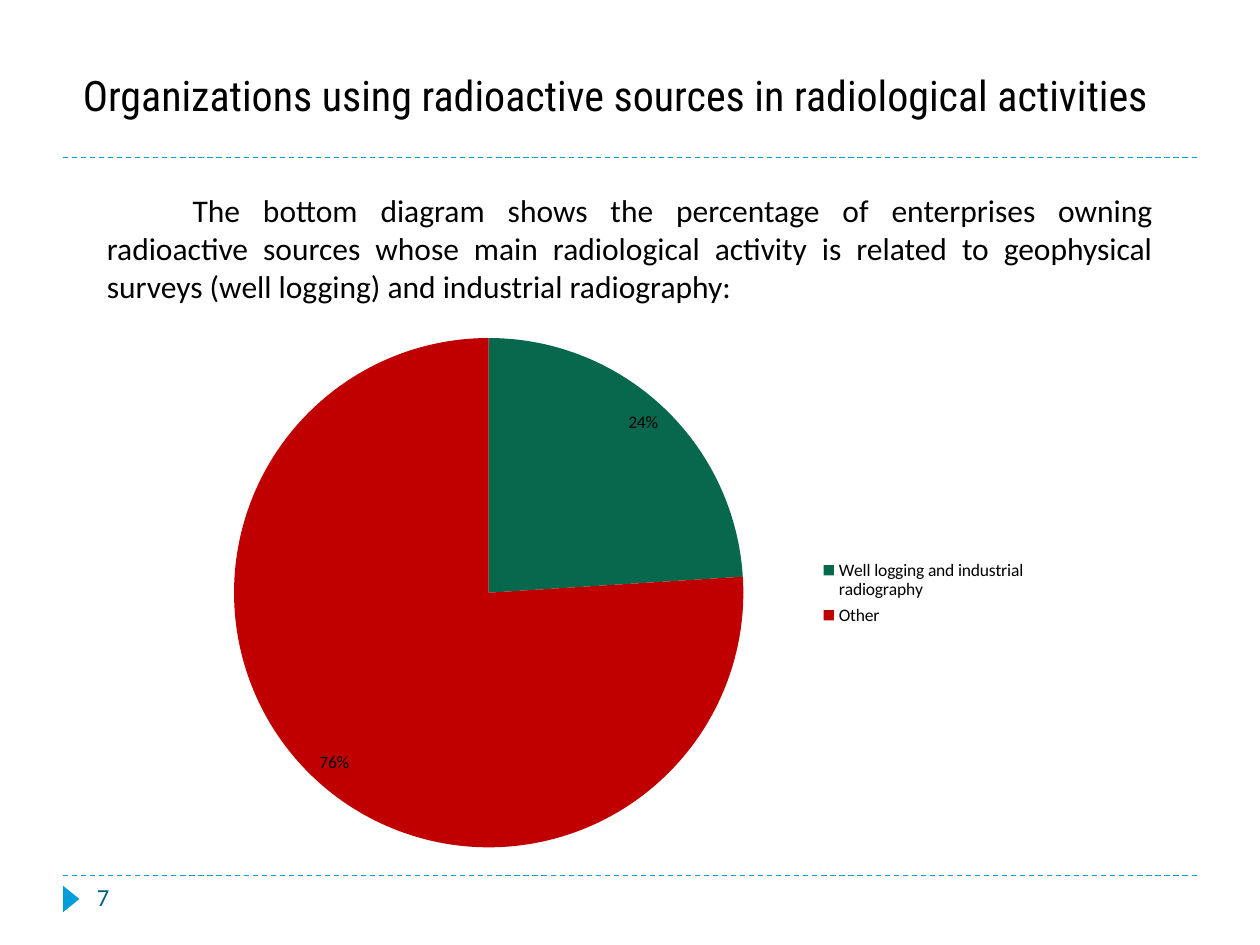
from lxml.etree import SubElement
from pptx import Presentation
from pptx.chart.data import CategoryChartData
from pptx.dml.color import RGBColor
from pptx.enum.chart import XL_CHART_TYPE, XL_LABEL_POSITION, XL_LEGEND_POSITION
from pptx.enum.dml import MSO_LINE
from pptx.enum.shapes import MSO_CONNECTOR, MSO_SHAPE
from pptx.enum.text import MSO_ANCHOR, MSO_AUTO_SIZE, PP_ALIGN
from pptx.oxml import parse_xml
from pptx.oxml.ns import nsdecls, qn
from pptx.util import Inches, Pt

BLACK = RGBColor(0x00, 0x00, 0x00)
ACCENT = RGBColor(0x00, 0x9D, 0xD9)
NUMBER_BLUE = RGBColor(0x04, 0x61, 0x7B)
GREEN = RGBColor(0x08, 0x68, 0x4E)
RED = RGBColor(0xC0, 0x00, 0x00)

deck = Presentation()
deck.slide_width, deck.slide_height = Inches(10), Inches(7.5)
slide = deck.slides.add_slide(deck.slide_layouts[5])
margin = deck.slide_width * 0.05
top_rule, bottom_rule = Inches(1.25), Inches(6.95)


def write(paragraph, text, font, size, color):
    run = paragraph.add_run()
    run.text = text
    run.font.name, run.font.size = font, Pt(size)
    run.font.color.rgb = color


def layout_xml(x, y, w, h, target=""):
    return parse_xml(
        f'<c:layout {nsdecls("c")}><c:manualLayout>{target}'
        '<c:xMode val="edge"/><c:yMode val="edge"/>'
        f'<c:x val="{x}"/><c:y val="{y}"/><c:w val="{w}"/><c:h val="{h}"/>'
        '</c:manualLayout></c:layout>')


# Dashed rules above and below the content
for y in (bottom_rule, top_rule):
    rule = slide.shapes.add_connector(
        MSO_CONNECTOR.STRAIGHT, int(margin), y, int(deck.slide_width - margin), y)
    rule.line.color.rgb = ACCENT
    rule.line.width = Pt(0.75)
    rule.line.dash_style = MSO_LINE.DASH
    SubElement(rule._element.spPr, qn("a:effectLst"))

# Page marker and number
marker = slide.shapes.add_shape(
    MSO_SHAPE.ISOSCELES_TRIANGLE, Inches(0.46), Inches(7.07), Inches(0.21), Inches(0.13))
marker.rotation = 90
marker.shadow.inherit = False
marker.fill.solid()
marker.fill.fore_color.rgb = ACCENT
marker.line.fill.background()

page_number = slide.shapes.add_textbox(Inches(0.67), bottom_rule, Inches(2.17), Inches(0.4))
write(page_number.text_frame.paragraphs[0], "7", "Calibri", 14, NUMBER_BLUE)

# Title, kept clear of the top rule by its bottom inset
title = slide.shapes.title
title.left, title.top, title.width, title.height = map(Inches, (0.12, 0.63, 9.53, 0.76))
title_frame = title.text_frame
title_frame.word_wrap = True
title_frame.auto_size = MSO_AUTO_SIZE.NONE
title_frame.vertical_anchor = MSO_ANCHOR.BOTTOM
title_frame.margin_bottom = Inches(0.44)
title_frame.paragraphs[0].alignment = PP_ALIGN.CENTER
write(title_frame.paragraphs[0],
      "Organizations using radioactive sources in radiological activities",
      "Roboto Condensed", 24, BLACK)

# Introduction with a first-line indent
intro = slide.shapes.add_textbox(Inches(0.75), Inches(1.47), Inches(8.5), Inches(1.01))
intro.text_frame.word_wrap = True
intro_line = intro.text_frame.paragraphs[0]
intro_line.alignment = PP_ALIGN.JUSTIFY
intro_line._p.get_or_add_pPr().set("indent", str(Inches(0.68)))
write(intro_line,
      "The bottom diagram shows the percentage of enterprises owning radioactive "
      "sources whose main radiological activity is related to geophysical surveys "
      "(well logging) and industrial radiography:", "Calibri", 18, BLACK)

# Pie of enterprises by main activity
shares = CategoryChartData()
shares.categories = ["Well logging and industrial radiography", "Other"]
shares.add_series("Series 1", (24, 76))
pie = slide.shapes.add_chart(
    XL_CHART_TYPE.PIE, Inches(1.3), Inches(2.55), Inches(6.97), Inches(4.31), shares).chart
pie.has_title = False
pie.font.name, pie.font.size = "Calibri", Pt(10)
pie.font.color.rgb = BLACK

plot = pie.plots[0]
plot.vary_by_categories = True
for index, color in enumerate((GREEN, RED)):
    wedge = plot.series[0].points[index].format
    wedge.fill.solid()
    wedge.fill.fore_color.rgb = color
    wedge.line.fill.background()

plot.has_data_labels = True
labels = plot.data_labels
labels.show_percentage, labels.show_value = True, False
labels.number_format, labels.number_format_is_linked = "0%", False
labels.position = XL_LABEL_POSITION.INSIDE_END
labels.font.name, labels.font.size = "Calibri", Pt(10)
labels.font.color.rgb = BLACK

pie.has_legend = True
legend = pie.legend
legend.position = XL_LEGEND_POSITION.RIGHT
legend.include_in_layout = False
legend.font.name, legend.font.size = "Calibri", Pt(10)
legend.font.color.rgb = BLACK

# Places of the pie and its legend, as shares of the chart
plot_area = pie._chartSpace.chart.plotArea
for old_layout in plot_area.findall(qn("c:layout")):
    plot_area.remove(old_layout)
plot_area.insert(0, layout_xml(0.08, 0.03, 0.58, 0.94, '<c:layoutTarget val="inner"/>'))
legend_xml = legend._element
for old_layout in legend_xml.findall(qn("c:layout")):
    legend_xml.remove(old_layout)
legend_xml.find(qn("c:legendPos")).addnext(layout_xml(0.74, 0.43, 0.25, 0.14))

deck.save("out.pptx")
